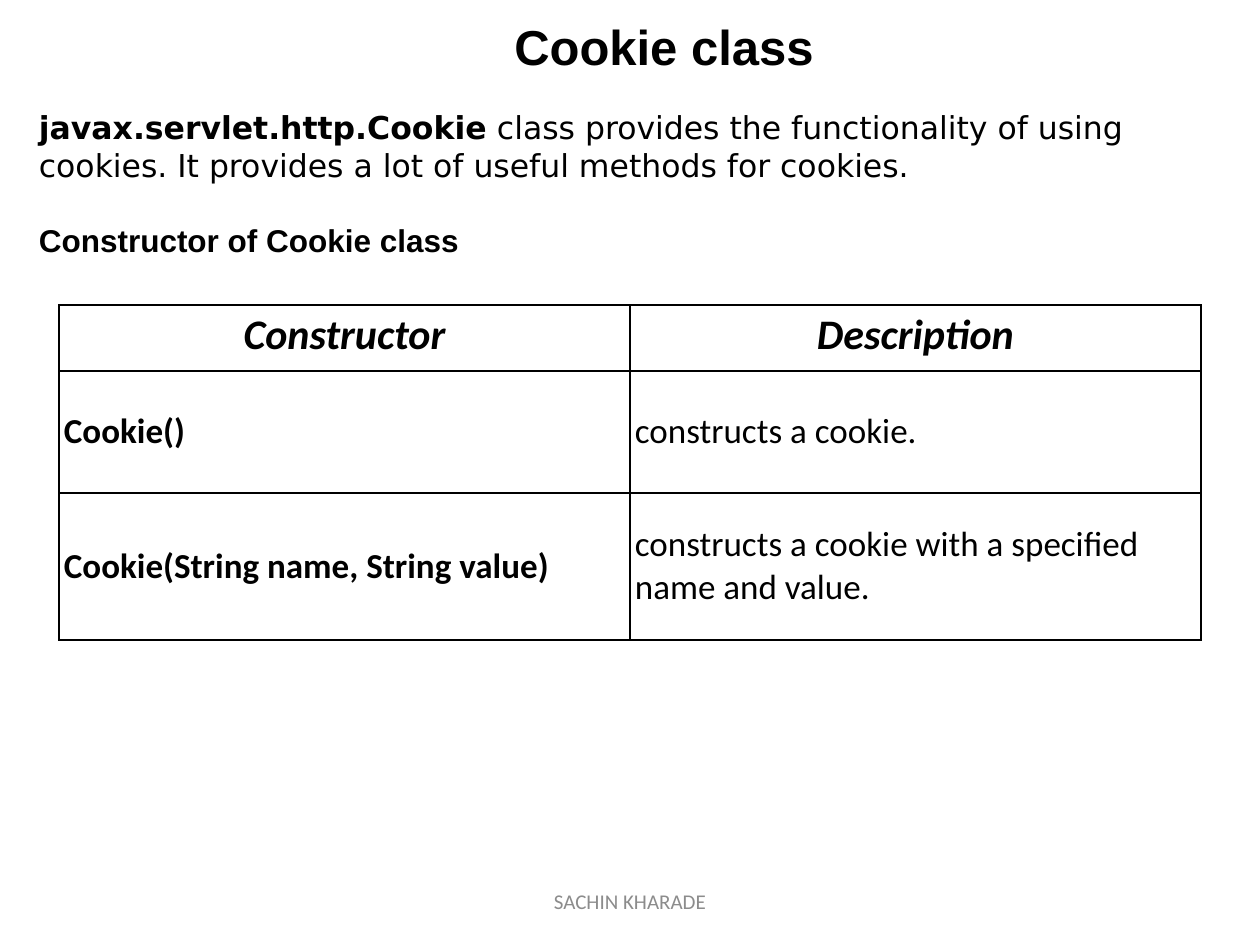
from lxml import etree
from pptx import Presentation
from pptx.dml.color import RGBColor
from pptx.enum.text import MSO_ANCHOR, PP_ALIGN
from pptx.oxml.ns import qn
from pptx.util import Pt

MID, TOP = MSO_ANCHOR.MIDDLE, MSO_ANCHOR.TOP
LEFT, CENTER = PP_ALIGN.LEFT, PP_ALIGN.CENTER
SCALE = 914400 / 126
BLACK, GRAY = "000000", "8C8C8C"
ROWS = [
    ("Constructor", "Description"),
    ("Cookie()", "constructs a cookie."),
    ("Cookie(String name, String value)",
     "constructs a cookie with a specified name and value."),
]


def px(n):
    return round(n * SCALE)


def color(code):
    return RGBColor.from_string(code)


def write(para, text, size=18, font="Calibri", ink=BLACK, bold=False,
          italic=False, align=LEFT):
    para.alignment = align
    run = para.add_run()
    run.text = text
    face = run.font
    face.size, face.name = Pt(size), font
    face.bold, face.italic = bold, italic
    face.color.rgb = color(ink)


def add_box(slide, box, anchor=TOP, wrap=True):
    frame = slide.shapes.add_textbox(*map(px, box)).text_frame
    frame.word_wrap = wrap
    frame.vertical_anchor = anchor
    return frame


def add_title(slide, box):
    frame = add_box(slide, box, wrap=False)
    write(frame.paragraphs[0], "Cookie class", size=28, font="Arial", bold=True)


def add_intro(slide, box):
    frame = add_box(slide, box, anchor=MID)
    frame.margin_left = 0
    para = frame.paragraphs[0]
    write(para, "javax.servlet.http.Cookie", font="DejaVu Sans", bold=True)
    write(para, " class provides the functionality of using cookies. "
          "It provides a lot of useful methods for cookies.", font="DejaVu Sans")
    head = frame.add_paragraph()
    head.space_before = Pt(21)
    write(head, "Constructor of Cookie class", font="Arial", bold=True)


def add_border(cell):
    props = cell._tc.get_or_add_tcPr()
    for i, side in enumerate(("lnL", "lnR", "lnT", "lnB")):
        line = etree.Element(qn("a:" + side), w=str(Pt(1)))
        fill = etree.SubElement(line, qn("a:solidFill"))
        etree.SubElement(fill, qn("a:srgbClr"), val=BLACK)
        props.insert(i, line)


def add_grid(slide, box, heights):
    grid = slide.shapes.add_table(len(ROWS), 2, *map(px, box)).table
    for col in grid.columns:
        col.width = px(box[2] / 2)
    for r, texts in enumerate(ROWS):
        grid.rows[r].height = px(heights[r])
        head = r == 0
        for c, text in enumerate(texts):
            cell = grid.cell(r, c)
            cell.fill.background()
            cell.margin_left = cell.margin_right = px(5)
            cell.margin_top = cell.margin_bottom = px(5)
            cell.vertical_anchor = TOP if head else MID
            write(cell.text_frame.paragraphs[0], text, size=24 if head else 20,
                  bold=head or c == 0, italic=head,
                  align=CENTER if head else LEFT)
            add_border(cell)


def add_footer(slide, box):
    frame = add_box(slide, box, anchor=MID)
    write(frame.paragraphs[0], "SACHIN KHARADE", size=12, ink=GRAY, align=CENTER)


def main():
    deck = Presentation()
    deck.slide_width, deck.slide_height = px(1260), px(945)
    slide = deck.slides.add_slide(deck.slide_layouts[6])
    add_grid(slide, (59, 305, 1142, 335), (66, 122, 147))
    add_intro(slide, (39, 101, 1182, 165))
    add_title(slide, (502, 10, 328, 72))
    add_footer(slide, (430, 876, 400, 50))
    deck.save("out.pptx")


if __name__ == "__main__":
    main()
